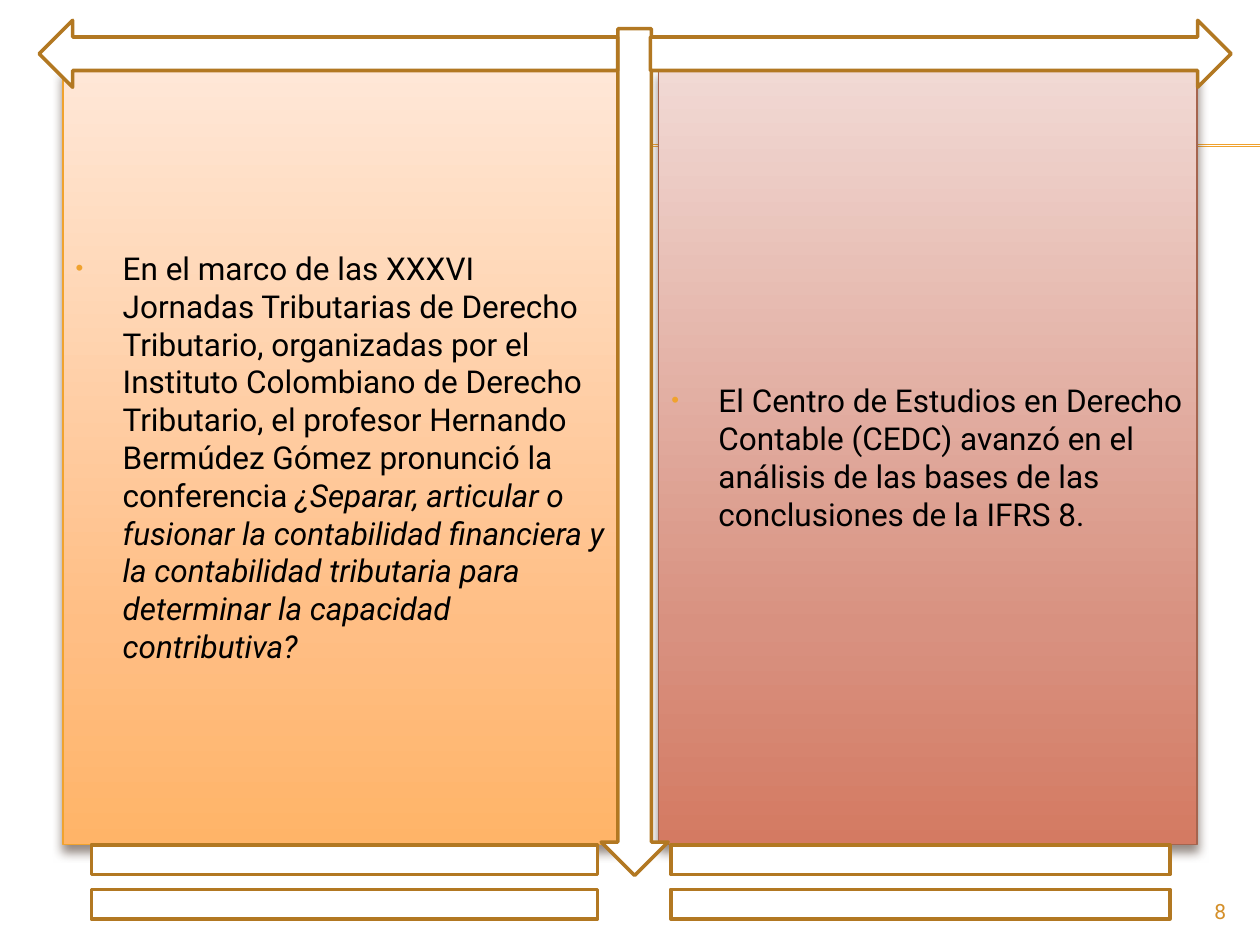
from lxml.etree import SubElement
from pptx import Presentation
from pptx.dml.color import RGBColor
from pptx.enum.shapes import MSO_CONNECTOR, MSO_SHAPE
from pptx.enum.text import MSO_ANCHOR, MSO_AUTO_SIZE, PP_ALIGN
from pptx.oxml.ns import qn
from pptx.util import Cm, Pt

AMBER = RGBColor(0xF0, 0xA2, 0x2E)
BROWN = RGBColor(0xB2, 0x78, 0x22)
RUST = RGBColor(0xA5, 0x64, 0x4E)
NUMBER = RGBColor(0xD4, 0x8F, 0x29)
SHADOW = RGBColor(0x4E, 0x3B, 0x30)
BLACK = RGBColor(0, 0, 0)
WHITE = RGBColor(0xFF, 0xFF, 0xFF)
ORANGE_STOPS = [(0, RGBColor(0xFF, 0xE7, 0xD7)), (72, RGBColor(0xFF, 0xBE, 0x84)),
                (100, RGBColor(0xFF, 0xB4, 0x68))]
RED_STOPS = [(0, RGBColor(0xF1, 0xD9, 0xD4)), (72, RGBColor(0xD8, 0x91, 0x80)),
             (100, RGBColor(0xD4, 0x7A, 0x62))]


def sub(parent, tag, **attrs):
    return SubElement(parent, qn(tag), {k: str(v) for k, v in attrs.items()})


class Builder:
    font = "Roboto"

    def __init__(self, slide):
        self.s = slide

    def place(self, sp, box):
        sp.left, sp.top, sp.width, sp.height = (Cm(v) for v in box)

    def run(self, p, text, size, color, italic=None):
        r = p.add_run()
        r.text = text
        r.font.name, r.font.size, r.font.italic = self.font, Pt(size), italic
        r.font.color.rgb = color

    def rule(self, x1, x2, y):
        ln = self.s.shapes.add_connector(MSO_CONNECTOR.STRAIGHT, Cm(x1), Cm(y), Cm(x2), Cm(y))
        ln.line.color.rgb, ln.line.width = AMBER, Pt(0.75)
        sub(ln._element.spPr, "a:effectLst")
        self.s.shapes._spTree.insert(2, ln._element)  # behind the panels

    def panel(self, idx, box, stops, border, runs):
        sp = self.s.placeholders[idx]
        self.place(sp, box)
        # Gradient from top to bottom
        sp.fill.gradient()
        sp.fill.gradient_angle = 270
        spPr = sp._element.spPr
        gs_list = spPr.find(".//" + qn("a:gsLst"))
        gs_list.clear()
        for pos, color in stops:
            sub(sub(gs_list, "a:gs", pos=pos * 1000), "a:srgbClr", val=color)
        sp.line.color.rgb, sp.line.width = border, Pt(0.79)
        # Soft shadow below
        shadow = sub(sub(spPr, "a:effectLst"), "a:outerShdw", blurRad=Pt(6), dist=Pt(4),
                     dir=5400000, algn="ctr", rotWithShape=0)
        sub(sub(shadow, "a:srgbClr", val=SHADOW), "a:alpha", val=60000)
        # Bulleted text
        tf = sp.text_frame
        tf.auto_size, tf.vertical_anchor = MSO_AUTO_SIZE.NONE, MSO_ANCHOR.MIDDLE
        p = tf.paragraphs[0]
        pPr = p._p.get_or_add_pPr()
        pPr.set("marL", str(Cm(0.95)))
        pPr.set("indent", str(Cm(-0.95)))
        sub(sub(pPr, "a:buClr"), "a:srgbClr", val=AMBER)
        sub(pPr, "a:buSzPct", val=70000)
        sub(pPr, "a:buFont", typeface="Arial")
        sub(pPr, "a:buChar", char="•")
        for text, italic in runs:
            self.run(p, text, 18, BLACK, italic)

    def outline(self, kind, box):
        sp = self.s.shapes.add_shape(kind, *(Cm(v) for v in box))
        sp.shadow.inherit = False
        sp.fill.solid()
        sp.fill.fore_color.rgb = WHITE
        sp.line.color.rgb, sp.line.width = BROWN, Pt(2)

    def number(self, text, box):
        tf = self.s.shapes.add_textbox(*(Cm(v) for v in box)).text_frame
        tf.word_wrap = True
        p = tf.paragraphs[0]
        p.alignment = PP_ALIGN.RIGHT
        self.run(p, text, 12, NUMBER)


def main():
    prs = Presentation()
    prs.slide_width, prs.slide_height = Cm(25.4), Cm(19.05)
    s = prs.slides.add_slide(prs.slide_layouts[3])
    title = s.shapes.title._element
    title.getparent().remove(title)
    b = Builder(s)

    # Double rule behind everything
    for y in (2.92, 2.95):
        b.rule(1.42, 25.4, y)

    # Two text panels
    b.panel(1, (1.27, 1.4, 11.23, 15.62), ORANGE_STOPS, AMBER, [
        ("En el marco de las XXXVI Jornadas Tributarias de Derecho Tributario, organizadas por "
         "el Instituto Colombiano de Derecho Tributario, el profesor Hernando Bermúdez Gómez "
         "pronunció la conferencia ", None),
        ("¿Separar, articular o fusionar la contabilidad financiera y la contabilidad "
         "tributaria para determinar la capacidad contributiva?", True)])
    b.panel(2, (13.28, 1.4, 10.85, 15.62), RED_STOPS, RUST, [
        ("El Centro de Estudios en Derecho Contable (CEDC) avanzó en el análisis de las bases "
         "de las conclusiones de la IFRS 8.", None)])

    # T-account frame: arrows, then the equal signs below each side
    b.outline(MSO_SHAPE.DOWN_ARROW, (12.12, 0.58, 1.35, 17.07))
    b.outline(MSO_SHAPE.RIGHT_ARROW, (13.11, 0.41, 11.71, 1.35))
    b.outline(MSO_SHAPE.LEFT_ARROW, (0.79, 0.41, 11.66, 1.35))
    for x, width in ((0, 13.89), (11.71, 13.69)):
        b.outline(MSO_SHAPE.MATH_EQUAL, (x, 16.51, width, 2.54))

    # Slide number
    b.number("8", (22.86, 17.98, 2.11, 0.69))
    prs.save("out.pptx")


if __name__ == "__main__":
    main()
